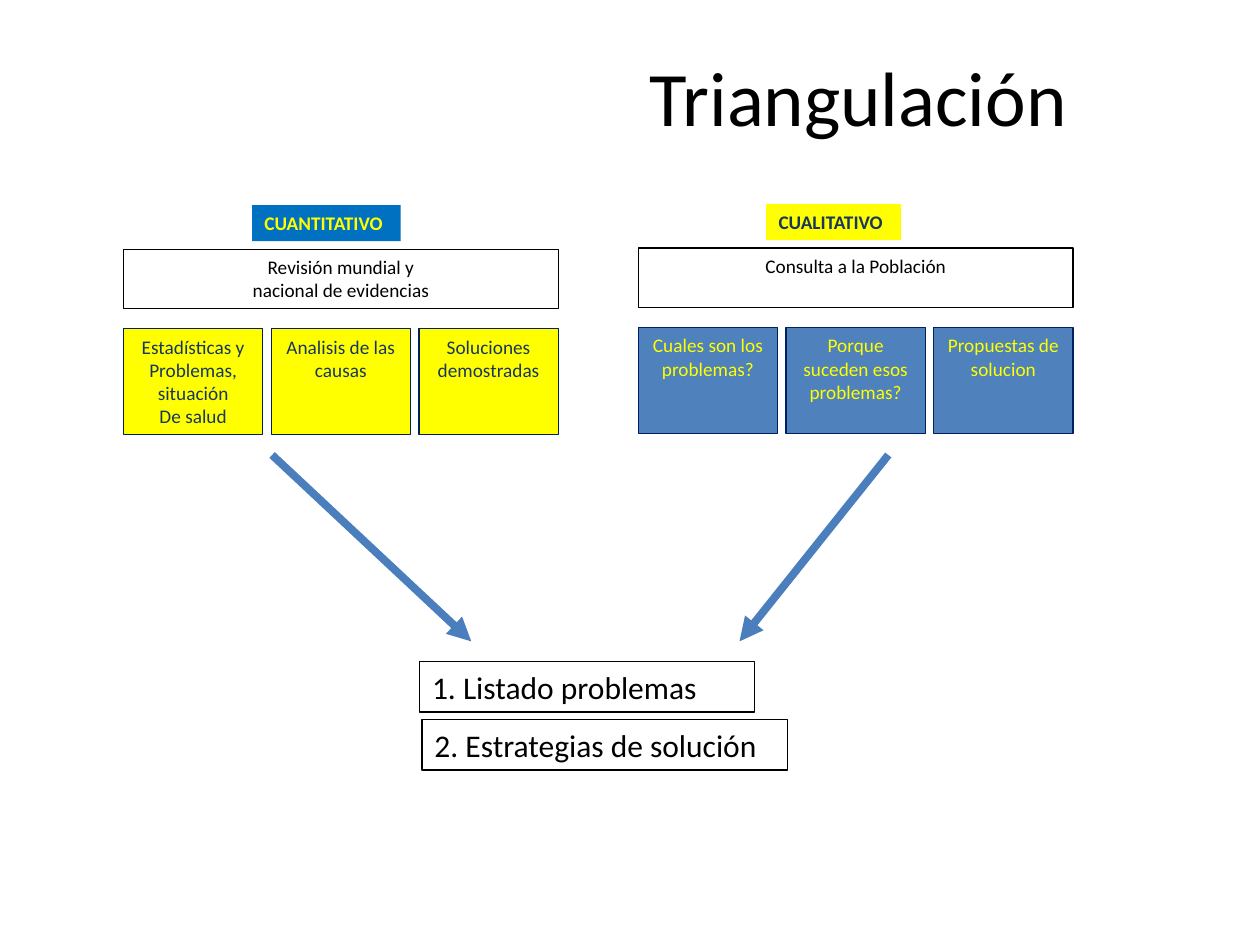
from lxml.etree import SubElement
from pptx import Presentation
from pptx.dml.color import RGBColor
from pptx.enum.shapes import MSO_CONNECTOR
from pptx.enum.text import MSO_ANCHOR, PP_ALIGN as Align
from pptx.oxml.ns import qn
from pptx.util import Pt

TITLE = "Triangulación"
# Tag: text, left, width, fill, text colour. Cards share one fill and text colour.
BRANCHES = [
    {"left": 70.6, "top": 117.2,
     "tag": ("CUANTITATIVO", 144, 85, "0070C0", "FFFF00"),
     "source": ["Revisión mundial y", "nacional de evidencias"],
     "cards": [["Estadísticas y", "Problemas, situación", "De salud"],
               ["Analisis de las causas"],
               ["Soluciones demostradas"]],
     "fill": "FFFF00", "color": "17375E"},
    {"left": 364.8, "top": 116.6,
     "tag": ("CUALITATIVO", 437.8, 77, "FFFF00", "17375E"),
     "source": ["Consulta a la Población"],
     "cards": [["Cuales son los problemas?"],
               ["Porque suceden esos problemas?"],
               ["Propuestas de solucion"]],
     "fill": "4F81BD", "color": "FFFF00"},
]
ARROWS = [((155.5, 260), (269.3, 366.5)), ((507.6, 260), (422.6, 366.5))]
RESULTS = [("1. Listado problemas", 239.8, 378, 191.5),
           ("2. Estrategias de solución", 241.2, 411.1, 208.8)]

BRANCH_WIDTH, CARD_WIDTH = 248.4, 79.6
CARD_STEP = (BRANCH_WIDTH - CARD_WIDTH) / 2
TAG_HEIGHT, SOURCE_HEIGHT, CARD_HEIGHT, RESULT_HEIGHT = 20.6, 33.8, 60.5, 28.9
SOURCE_DROP, CARD_DROP = 25.2, 70.6


def rgb(value):
    return RGBColor.from_string(value)


def write(frame, lines, size, color, align, bold=False):
    for index, line in enumerate(lines):
        para = frame.paragraphs[0] if index == 0 else frame.add_paragraph()
        para.alignment = align
        span = para.add_run()
        span.text = line
        span.font.name = "Calibri"
        span.font.size = Pt(size)
        span.font.bold = bold
        span.font.color.rgb = rgb(color)


def add_box(shapes, place, lines, size=11, color="000000", fill=None,
            line="000000", align=Align.CENTER, bold=False, wrap=True):
    box = shapes.add_textbox(*map(Pt, place))
    if fill:
        box.fill.solid()
        box.fill.fore_color.rgb = rgb(fill)
    if line:
        box.line.color.rgb = rgb(line)
        box.line.width = Pt(0.75)
    box.text_frame.word_wrap = wrap
    write(box.text_frame, lines, size, color, align, bold)


def add_branch(page, branch):
    shapes = page.shapes.add_group_shape().shapes
    left, top = branch["left"], branch["top"]
    text, tag_left, tag_width, fill, color = branch["tag"]
    add_box(shapes, (tag_left, top, tag_width, TAG_HEIGHT), [text], color=color,
            fill=fill, line=None, align=Align.LEFT, bold=True, wrap=False)
    add_box(shapes, (left, top + SOURCE_DROP, BRANCH_WIDTH, SOURCE_HEIGHT),
            branch["source"])
    for index, lines in enumerate(branch["cards"]):
        place = (left + index * CARD_STEP, top + CARD_DROP, CARD_WIDTH, CARD_HEIGHT)
        add_box(shapes, place, lines, color=branch["color"],
                fill=branch["fill"], line="002060")


def add_arrow(page, start, end):
    arrow = page.shapes.add_connector(MSO_CONNECTOR.STRAIGHT, *map(Pt, start + end))
    arrow.line.color.rgb = rgb("4B7EBC")
    arrow.line.width = Pt(4.5)
    SubElement(arrow.line._get_or_add_ln(), qn("a:tailEnd"), type="triangle")
    SubElement(arrow._element.spPr, qn("a:effectLst"))


def main():
    deck = Presentation()
    deck.slide_width, deck.slide_height = Pt(720), Pt(540)
    page = deck.slides.add_slide(deck.slide_layouts[5])

    title = page.shapes.title
    title.left, title.top, title.width, title.height = map(Pt, (297.4, 20.9, 386.6, 67.7))
    title.text_frame.vertical_anchor = MSO_ANCHOR.MIDDLE
    write(title.text_frame, [TITLE], 44, "000000", Align.CENTER)

    for branch in BRANCHES:
        add_branch(page, branch)
    for start, end in ARROWS:
        add_arrow(page, start, end)
    for text, left, top, width in RESULTS:
        add_box(page.shapes, (left, top, width, RESULT_HEIGHT), [text],
                size=18, align=Align.LEFT)

    deck.save("out.pptx")


if __name__ == "__main__":
    main()
